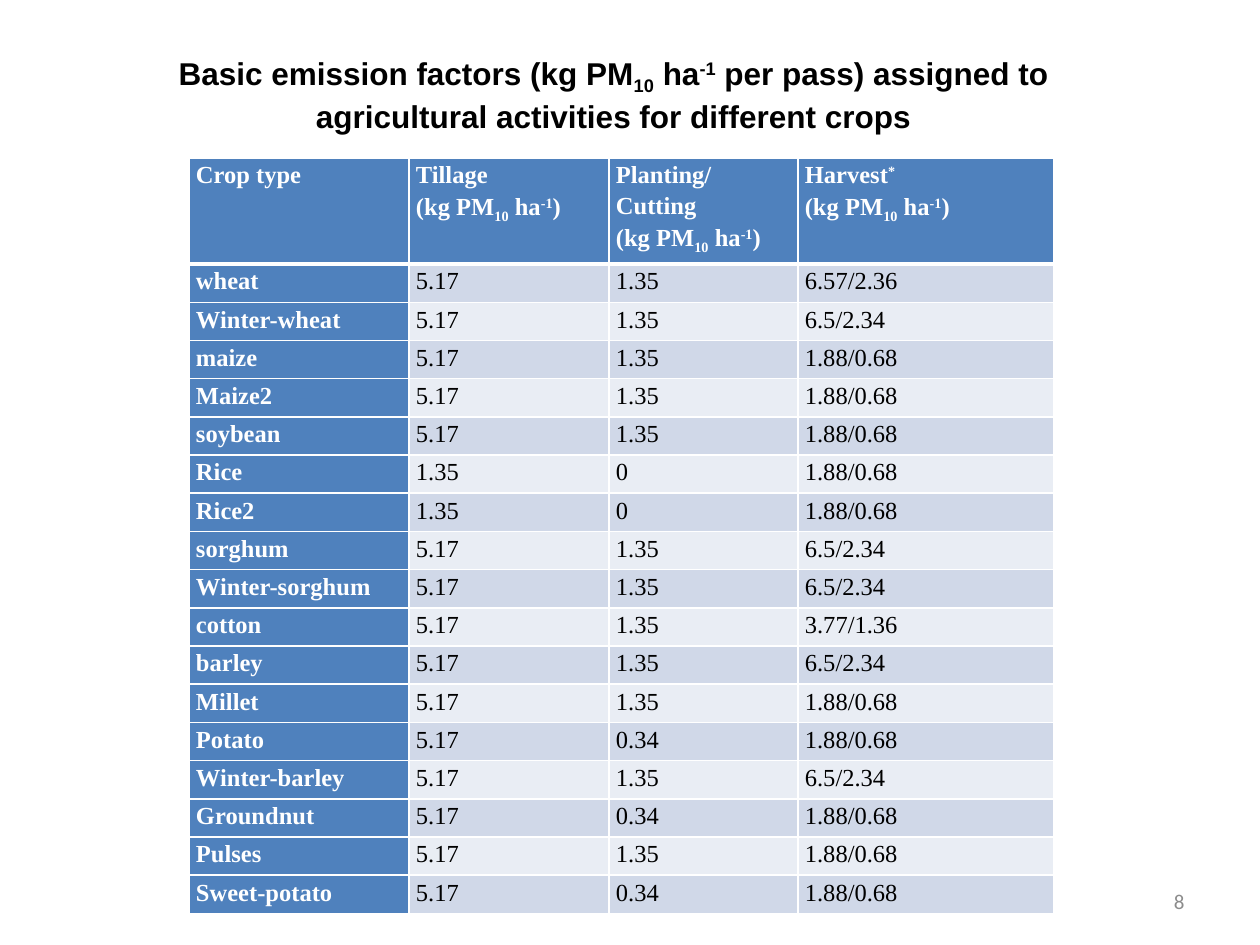
from typing import NamedTuple

from lxml import etree
from pptx import Presentation
from pptx.dml.color import RGBColor
from pptx.enum.text import MSO_ANCHOR, MSO_AUTO_SIZE, PP_ALIGN
from pptx.oxml.ns import qn
from pptx.util import Pt

PX = 914400 // 126  # EMU in one px
CENTER, RIGHT = PP_ALIGN.CENTER, PP_ALIGN.RIGHT
MIDDLE = MSO_ANCHOR.MIDDLE
NO_AUTOFIT = MSO_AUTO_SIZE.NONE
TITLE_ONLY = 5

COLORS = {
    "head": "4F81BD",
    "band_dark": "D0D8E8",
    "band_light": "E9EDF4",
    "white": "FFFFFF",
    "black": "000000",
    "gray": "8C8C8C",
}


class Box(NamedTuple):
    left: int
    top: int
    width: int
    height: int

    def emu(self) -> list[int]:
        return [v * PX for v in self]


class Script(NamedTuple):
    """Text set below or above the baseline, by a percentage."""
    text: str
    shift: int


class Crop(NamedTuple):
    name: str
    tillage: str
    planting: str
    harvest: str


SUB_10, SUP_1 = Script("10", -25), Script("-1", 30)
UNIT = ["(kg PM", SUB_10, " ha", SUP_1, ")"]

TITLE_BOX = Box(103, 49, 1021, 90)
NUMBER_BOX = Box(903, 876, 294, 50)
TABLE_BOX = Box(189, 158, 865, 723)
COL_WIDTHS = [220, 200, 189, 256]
HEADER_HEIGHT = 73
MARGIN_LEFT, MARGIN_RIGHT = 7, 8

TITLE = [["Basic emission factors (kg PM", SUB_10, " ha", SUP_1,
          " per pass) assigned to agricultural activities for different crops"]]
HEADERS = [
    [["Crop type"]],
    [["Tillage"], UNIT],
    [["Planting/Cutting"], UNIT],
    [["Harvest", Script("*", 30)], UNIT],
]
CROPS = [
    Crop("wheat", "5.17", "1.35", "6.57/2.36"),
    Crop("Winter-wheat", "5.17", "1.35", "6.5/2.34"),
    Crop("maize", "5.17", "1.35", "1.88/0.68"),
    Crop("Maize2", "5.17", "1.35", "1.88/0.68"),
    Crop("soybean", "5.17", "1.35", "1.88/0.68"),
    Crop("Rice", "1.35", "0", "1.88/0.68"),
    Crop("Rice2", "1.35", "0", "1.88/0.68"),
    Crop("sorghum", "5.17", "1.35", "6.5/2.34"),
    Crop("Winter-sorghum", "5.17", "1.35", "6.5/2.34"),
    Crop("cotton", "5.17", "1.35", "3.77/1.36"),
    Crop("barley", "5.17", "1.35", "6.5/2.34"),
    Crop("Millet", "5.17", "1.35", "1.88/0.68"),
    Crop("Potato", "5.17", "0.34", "1.88/0.68"),
    Crop("Winter-barley", "5.17", "1.35", "6.5/2.34"),
    Crop("Groundnut", "5.17", "0.34", "1.88/0.68"),
    Crop("Pulses", "5.17", "1.35", "1.88/0.68"),
    Crop("Sweet-potato", "5.17", "0.34", "1.88/0.68"),
]


def write(tf, paragraphs: list[list], *, font: str, size: int, color: str,
          bold: bool = False, align=None, spacing: float | None = None) -> None:
    """Fill a text frame; each paragraph is a list of str and Script pieces."""
    for i, pieces in enumerate(paragraphs):
        p = tf.paragraphs[0] if i == 0 else tf.add_paragraph()
        p.alignment, p.line_spacing = align, spacing
        for piece in pieces:
            r = p.add_run()
            r.text = piece.text if isinstance(piece, Script) else piece
            r.font.name, r.font.size, r.font.bold = font, Pt(size), bold
            r.font.color.rgb = RGBColor.from_string(COLORS[color])
            if isinstance(piece, Script):
                r.font._element.set("baseline", str(piece.shift * 1000))


def set_borders(cell, top: int, bottom: int) -> None:
    """White cell borders; widths in points."""
    tcPr = cell._tc.get_or_add_tcPr()
    for side, width in (("L", 1), ("R", 1), ("T", top), ("B", bottom)):
        ln = etree.SubElement(tcPr, qn(f"a:ln{side}"), w=str(Pt(width)))
        fill = etree.SubElement(ln, qn("a:solidFill"))
        etree.SubElement(fill, qn("a:srgbClr"), val=COLORS["white"])


def draw_cell(cell, paragraphs: list[list], row: int, col: int) -> None:
    is_head = row == 0 or col == 0
    band = "band_dark" if row % 2 else "band_light"
    set_borders(cell, top=3 if row == 1 else 1, bottom=3 if row == 0 else 1)
    cell.fill.solid()
    cell.fill.fore_color.rgb = RGBColor.from_string(COLORS["head" if is_head else band])
    cell.margin_left, cell.margin_right = MARGIN_LEFT * PX, MARGIN_RIGHT * PX
    cell.margin_top = cell.margin_bottom = 0
    write(cell.text_frame, paragraphs, font="Times New Roman", size=14,
          color="white" if is_head else "black", bold=is_head, spacing=1.15)


def draw_table(s) -> None:
    rows = [HEADERS] + [[[[value]] for value in crop] for crop in CROPS]
    table = s.shapes.add_table(len(rows), len(COL_WIDTHS), *TABLE_BOX.emu()).table
    for column, width in zip(table.columns, COL_WIDTHS):
        column.width = width * PX
    body_height = (TABLE_BOX.height - HEADER_HEIGHT) * PX // len(CROPS)
    for i, row in enumerate(rows):
        table.rows[i].height = body_height if i else HEADER_HEIGHT * PX
        for j, paragraphs in enumerate(row):
            draw_cell(table.cell(i, j), paragraphs, i, j)


def draw_title(s) -> None:
    sp = s.shapes.title
    sp.left, sp.top, sp.width, sp.height = TITLE_BOX.emu()
    tf = sp.text_frame
    tf.word_wrap, tf.auto_size, tf.vertical_anchor = True, NO_AUTOFIT, MIDDLE
    write(tf, TITLE, font="Arial", size=18, color="black", bold=True, align=CENTER)


def draw_number(s) -> None:
    tf = s.shapes.add_textbox(*NUMBER_BOX.emu()).text_frame
    tf.word_wrap, tf.vertical_anchor = True, MIDDLE
    write(tf, [["8"]], font="Calibri", size=12, color="gray", align=RIGHT)


def main() -> None:
    prs = Presentation()
    prs.slide_width, prs.slide_height = 1260 * PX, 945 * PX
    s = prs.slides.add_slide(prs.slide_layouts[TITLE_ONLY])
    draw_number(s)
    draw_table(s)
    draw_title(s)
    prs.save("out.pptx")


if __name__ == "__main__":
    main()
